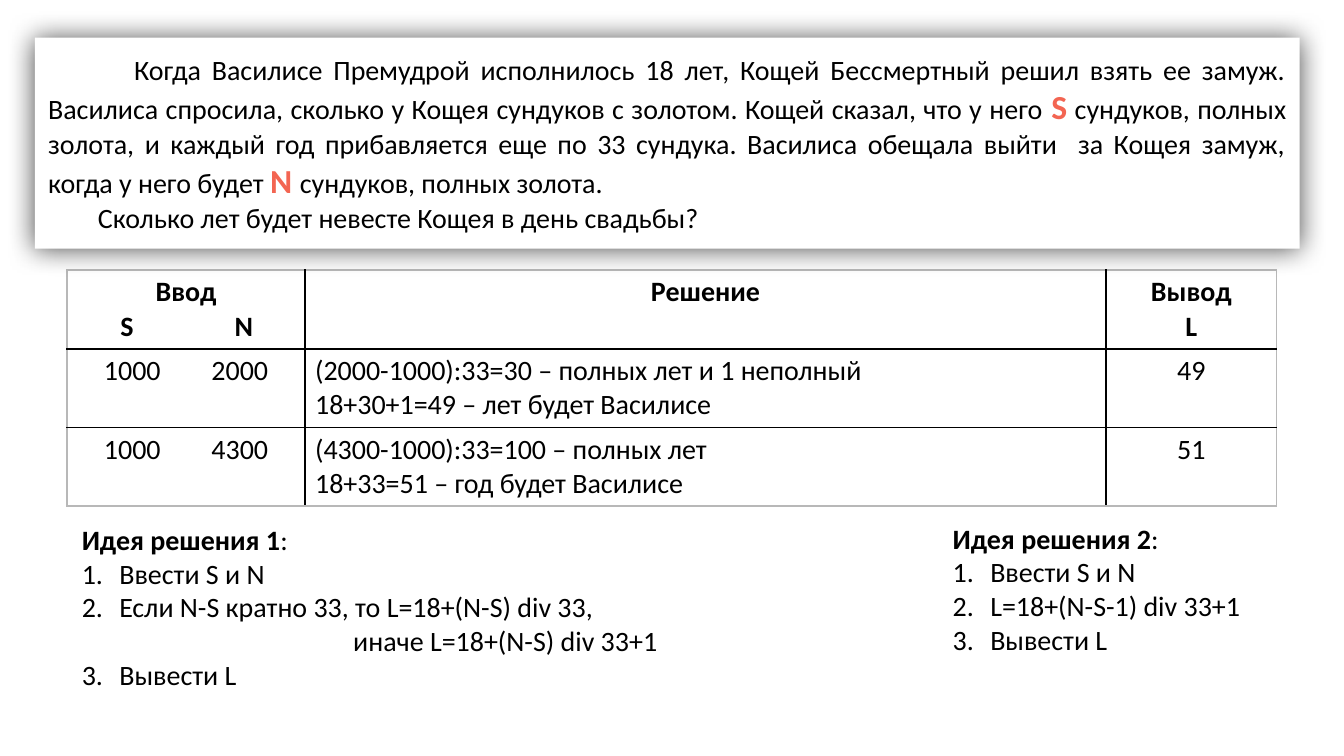
from lxml import etree
from pptx import Presentation
from pptx.dml.color import RGBColor
from pptx.enum.shapes import MSO_SHAPE as Shape
from pptx.enum.text import MSO_ANCHOR as Anchor, PP_ALIGN as Align
from pptx.oxml import parse_xml
from pptx.oxml.ns import nsdecls, qn
from pptx.util import Inches, Pt

BLACK, WHITE, CORAL, GRAY = "000000", "FFFFFF", "F36552", "B8B8B8"
BODY = {"name": "Calibri", "size": Pt(15), "bold": False}
BOLD = {**BODY, "bold": True}
VARIABLE = {**BOLD, "size": Pt(18)}


def color(hex_string):
    return RGBColor.from_string(hex_string)


def add_run(paragraph, text, font_values=BODY, hex_string=BLACK):
    """Add text to the paragraph; each newline becomes a line break."""
    for index, line in enumerate(text.split("\n")):
        if index:
            paragraph.add_line_break()
        run = paragraph.add_run()
        run.text = line
        for name, value in font_values.items():
            setattr(run.font, name, value)
        run.font.color.rgb = color(hex_string)


presentation = Presentation()
presentation.slide_width = Inches(10)
presentation.slide_height = Inches(10) * 9 // 16
slide = presentation.slides.add_slide(presentation.slide_layouts[6])

# Table of worked examples: a paragraph with tabs holds the S and N columns
COLUMN_WIDTHS = [1.77, 5.96, 1.27]
HEADER_TABS, NUMBER_TABS = [0.37, 1.24], [0.41, 1.21]
ROWS = [
    [["Ввод", "\tS\tN"], ["Решение"], ["Вывод\nL"]],
    [["\t1000\t2000"],
     ["(2000-1000):33=30 – полных лет и 1 неполный\n18+30+1=49 – лет будет Василисе"],
     ["49"]],
    [["\t1000\t4300"],
     ["(4300-1000):33=100 – полных лет", "18+33=51 – год будет Василисе"],
     ["51"]],
]
frame = slide.shapes.add_table(3, 3, Inches(0.5), Inches(2.01), Inches(9), Inches(1.73))
table = frame.table
for column, width in zip(table.columns, COLUMN_WIDTHS):
    column.width = Inches(width)
for row_index, row in enumerate(ROWS):
    table.rows[row_index].height = Inches(0.57)
    for column_index, texts in enumerate(row):
        cell = table.cell(row_index, column_index)
        cell.margin_left = cell.margin_right = Pt(5.4)
        cell.margin_top = cell.margin_bottom = Pt(2.7)
        text_frame = cell.text_frame
        for text_index, text in enumerate(texts):
            paragraph = text_frame.add_paragraph() if text_index else text_frame.paragraphs[0]
            is_solution = row_index > 0 and column_index == 1
            paragraph.alignment = Align.LEFT if is_solution or "\t" in text else Align.CENTER
            if "\t" in text:
                tabs = etree.SubElement(paragraph._p.get_or_add_pPr(), qn("a:tabLst"))
                for position in NUMBER_TABS if row_index else HEADER_TABS:
                    etree.SubElement(tabs, qn("a:tab"), pos=str(Inches(position)), algn="ctr")
            add_run(paragraph, text, BODY if row_index else BOLD)
        properties = cell._tc.get_or_add_tcPr()
        is_outer = {"lnL": column_index == 0, "lnR": column_index == 2,
                    "lnT": row_index == 0, "lnB": row_index == 2}
        for side, outer in is_outer.items():
            properties.append(parse_xml(
                f'<a:{side} {nsdecls("a")} w="{Pt(1)}"><a:solidFill>'
                f'<a:srgbClr val="{GRAY if outer else BLACK}"/></a:solidFill></a:{side}>'))
        cell.fill.background()

# Problem statement on a card with a soft shadow on all sides
card = slide.shapes.add_shape(
    Shape.RECTANGLE, Inches(0.26), Inches(0.28), Inches(9.41), Inches(1.57))
card.shadow.inherit = False
card.fill.solid()
card.fill.fore_color.rgb = color(WHITE)
card.line.fill.background()
effects = card._element.spPr.find(qn("a:effectLst"))
effects.append(parse_xml(
    f'<a:outerShdw {nsdecls("a")} blurRad="{Pt(15)}" dist="0" dir="0" algn="ctr" '
    f'rotWithShape="0"><a:srgbClr val="{BLACK}"><a:alpha val="70000"/></a:srgbClr>'
    '</a:outerShdw>'))
text_frame = card.text_frame
text_frame.word_wrap = True
text_frame.vertical_anchor = Anchor.MIDDLE
story, question = text_frame.paragraphs[0], text_frame.add_paragraph()
for paragraph, indent in ((story, 0.64), (question, 0.37)):
    paragraph.alignment = Align.JUSTIFY
    paragraph._p.get_or_add_pPr().set("indent", str(Inches(indent)))
add_run(story, "Когда Василисе Премудрой исполнилось 18 лет, Кощей Бессмертный решил взять "
               "ее замуж. Василиса спросила, сколько у Кощея сундуков с золотом. "
               "Кощей сказал, что у него ")
add_run(story, "S", VARIABLE, CORAL)
add_run(story, " сундуков, полных золота, и каждый год прибавляется еще по 33 сундука. "
               "Василиса обещала выйти  за Кощея замуж, когда у него будет ")
add_run(story, "N ", VARIABLE, CORAL)
add_run(story, "сундуков, полных золота.")
add_run(question, "Сколько лет будет невесте Кощея в день свадьбы?")

# Solution ideas: number, text; a line without a number continues the step above
IDEAS = [
    ("Идея решения 1", (0.51, 3.84, 4.52, 1.36), [
        (1, "Ввести S и N"),
        (2, "Если N-S кратно 33, то L=18+(N-S) div 33,"),
        (None, "иначе L=18+(N-S) div 33+1"),
        (3, "Вывести L")]),
    ("Идея решения 2", (6.99, 3.83, 2.37, 1.11), [
        (1, "Ввести S и N"),
        (2, "L=18+(N-S-1) div 33+1"),
        (3, "Вывести L")]),
]
for title, bounds, steps in IDEAS:
    text_frame = slide.shapes.add_textbox(*map(Inches, bounds)).text_frame
    text_frame.word_wrap = True
    heading = text_frame.paragraphs[0]
    add_run(heading, title, BOLD)
    add_run(heading, ":")
    for number, text in steps:
        paragraph = text_frame.add_paragraph()
        properties = paragraph._p.get_or_add_pPr()
        if number:
            properties.set("marL", str(Inches(0.28)))
            properties.set("indent", str(Inches(-0.28)))
            etree.SubElement(properties, qn("a:buFont"), typeface="+mj-lt")
            etree.SubElement(properties, qn("a:buAutoNum"),
                             type="arabicPeriod", startAt=str(number))
        else:
            properties.set("marL", str(Inches(2.02)))
        add_run(paragraph, text)

presentation.save("out.pptx")
